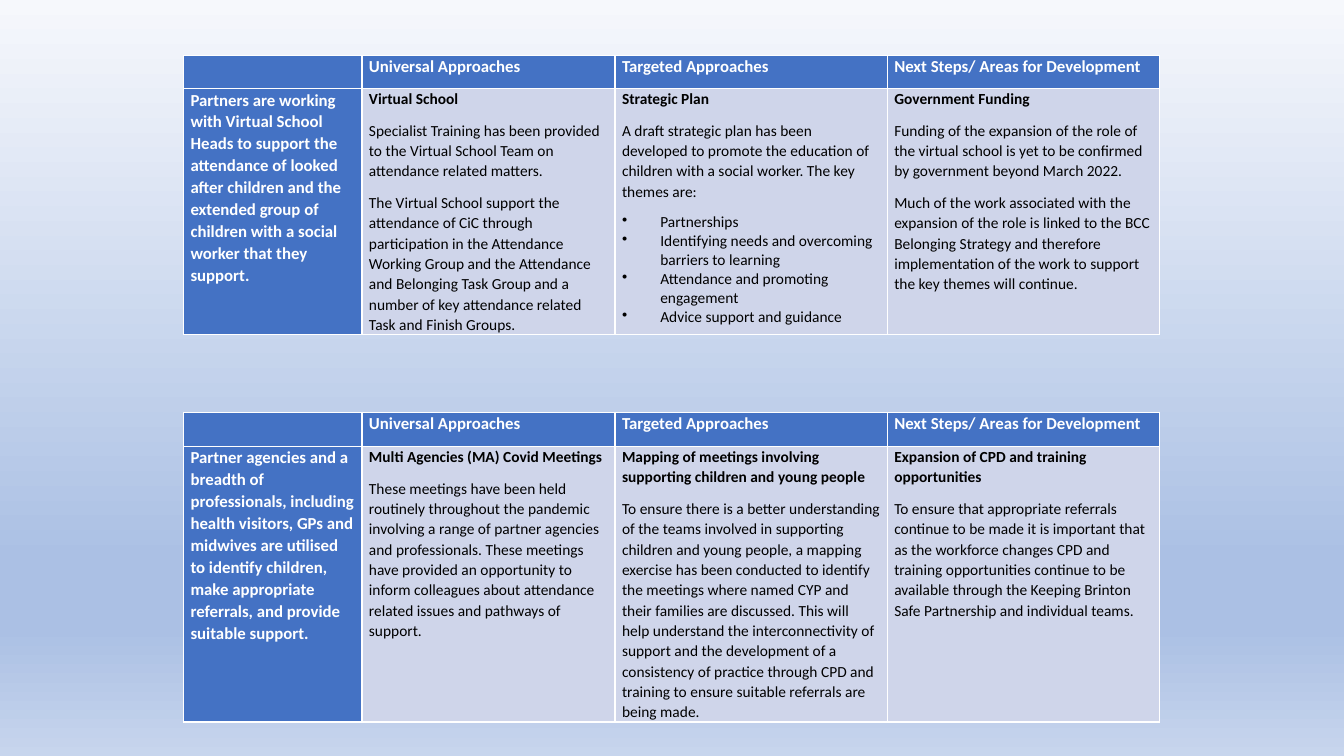
from pptx import Presentation
from pptx.dml.color import RGBColor
from pptx.enum.text import MSO_ANCHOR
from pptx.oxml.ns import qn
from pptx.oxml.xmlchemy import OxmlElement
from pptx.util import Inches, Pt

HEADERS = ["", "Universal Approaches", "Targeted Approaches", "Next Steps/ Areas for Development"]
BULLET = "• "

# Each table: top, header height, body height, then body cells.
# In every cell the first paragraph is bold; later ones are plain or bulleted.
TABLES = [
    (0.55, 0.33, 2.37, [
        ["Partners are working with Virtual School Heads to support the attendance of looked after "
         "children and the extended group of children with a social worker that they support."],
        ["Virtual School",
         "Specialist Training has been provided to the Virtual School Team on attendance related matters.",
         "The Virtual School support the attendance of CiC through participation in the Attendance "
         "Working Group and the Attendance and Belonging Task Group and a number of key attendance "
         "related Task and Finish Groups."],
        ["Strategic Plan",
         "A draft strategic plan has been developed to promote the education of children with a "
         "social worker. The key themes are:",
         BULLET + "Partnerships",
         BULLET + "Identifying needs and overcoming barriers to learning",
         BULLET + "Attendance and promoting engagement",
         BULLET + "Advice support and guidance"],
        ["Government Funding",
         "Funding of the expansion of the role of the virtual school is yet to be confirmed by "
         "government beyond March 2022.",
         "Much of the work associated with the expansion of the role is linked to the BCC Belonging "
         "Strategy and therefore implementation of the work to support the key themes will continue."],
    ]),
    (4.09, 0.34, 2.65, [
        ["Partner agencies and a breadth of professionals, including health visitors, GPs and midwives "
         "are utilised to identify children, make appropriate referrals, and provide suitable support."],
        ["Multi Agencies (MA) Covid Meetings",
         "These meetings have been held routinely throughout the pandemic involving a range of partner "
         "agencies and professionals. These meetings have provided an opportunity to inform colleagues "
         "about attendance related issues and pathways of support."],
        ["Mapping of meetings involving supporting children and young people",
         "To ensure there is a better understanding of the teams involved in supporting children and "
         "young people, a mapping exercise has been conducted to identify the meetings where named CYP "
         "and their families are discussed. This will help understand the interconnectivity of support "
         "and the development of a consistency of practice through CPD and training to ensure suitable "
         "referrals are being made."],
        ["Expansion of CPD and training opportunities",
         "To ensure that appropriate referrals continue to be made it is important that as the "
         "workforce changes CPD and training opportunities continue to be available through the "
         "Keeping Brinton Safe Partnership and individual teams."],
    ]),
]

LEFT = 1.82
COLUMNS = [1.77, 2.51, 2.7, 2.7]
INDENT = Inches(0.38)

BLUE = RGBColor(0x44, 0x72, 0xC4)
PALE = RGBColor(0xCF, 0xD5, 0xEA)
WHITE = RGBColor(0xFF, 0xFF, 0xFF)
BLACK = RGBColor(0, 0, 0)
BACKGROUND = [(0, RGBColor(0xF6, 0xF8, 0xFC)), (74, RGBColor(0xAB, 0xC0, 0xE4)),
              (83, RGBColor(0xAB, 0xC0, 0xE4)), (100, RGBColor(0xC7, 0xD5, 0xED))]


def paint_background(s):
    fill = s.background.fill
    fill.gradient()
    fill.gradient_angle = 270
    stops = s.element.find(".//" + qn("a:gsLst"))
    for stop in list(stops):
        stops.remove(stop)
    for percent, color in BACKGROUND:
        stop, clr = OxmlElement("a:gs"), OxmlElement("a:srgbClr")
        stop.set("pos", str(percent * 1000))
        clr.set("val", str(color))
        stop.append(clr)
        stops.append(stop)


def add_bullet(p):
    pPr = p._p.get_or_add_pPr()
    pPr.set("marL", str(INDENT))
    pPr.set("indent", str(-INDENT))
    bullet = OxmlElement("a:buChar")
    bullet.set("char", BULLET.strip())
    pPr.insert_element_before(bullet, "a:tabLst", "a:defRPr", "a:extLst")


def fill_cell(cell, texts, heading):
    """Write the paragraphs; heading cells are white on blue, the others black on pale."""
    cell.fill.solid()
    cell.fill.fore_color.rgb = BLUE if heading else PALE
    cell.margin_left = cell.margin_right = Inches(0.07)
    cell.margin_top = cell.margin_bottom = 0
    cell.vertical_anchor = MSO_ANCHOR.TOP
    tf = cell.text_frame
    for i, text in enumerate(texts):
        p = tf.add_paragraph() if i else tf.paragraphs[0]
        p.text = text.removeprefix(BULLET)
        p.font.name = "Calibri"
        p.font.size = Pt(12 if heading else 11)
        p.font.bold = i == 0
        p.font.color.rgb = WHITE if heading else BLACK
        if text.startswith(BULLET):
            add_bullet(p)
        else:
            p.line_spacing = 1.07
            p.space_after = Pt(8)


prs = Presentation()
prs.slide_width, prs.slide_height = Inches(13.33), Inches(7.5)
s = prs.slides.add_slide(prs.slide_layouts[6])
paint_background(s)

for top, header_height, body_height, body in TABLES:
    table = s.shapes.add_table(2, len(COLUMNS), Inches(LEFT), Inches(top), Inches(sum(COLUMNS)),
                               Inches(header_height + body_height)).table
    table.first_col = True
    for row, height in zip(table.rows, (header_height, body_height)):
        row.height = Inches(height)
    for c, width in enumerate(COLUMNS):
        table.columns[c].width = Inches(width)
        fill_cell(table.cell(0, c), [HEADERS[c]], True)
        fill_cell(table.cell(1, c), body[c], c == 0)

prs.save("out.pptx")
